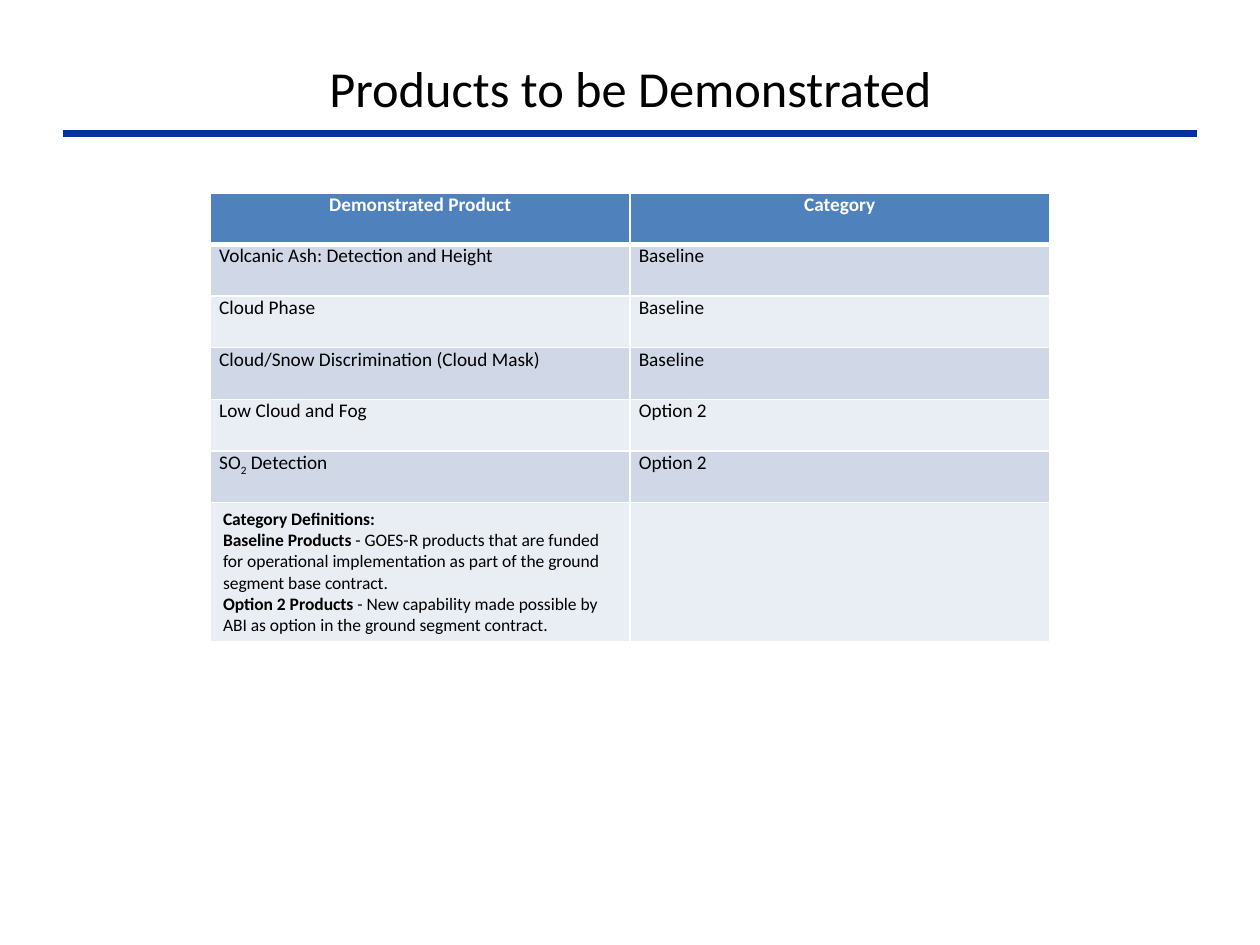
from dataclasses import dataclass
from typing import Any

from lxml.etree import SubElement
from pptx import Presentation
from pptx.dml.color import RGBColor
from pptx.enum.shapes import MSO_CONNECTOR
from pptx.enum.text import MSO_ANCHOR, PP_ALIGN
from pptx.oxml import parse_xml
from pptx.oxml.ns import nsdecls, qn
from pptx.util import Inches, Pt

BLACK = RGBColor(0x00, 0x00, 0x00)
WHITE = RGBColor(0xFF, 0xFF, 0xFF)
RULE_BLUE = RGBColor(0x00, 0x33, 0x99)
HEADER_BLUE = RGBColor(0x4F, 0x81, 0xBD)
BANDS = RGBColor(0xE9, 0xED, 0xF4), RGBColor(0xD0, 0xD8, 0xE8)

PRODUCTS = [
    ("Demonstrated Product", "Category"),
    ("Volcanic Ash: Detection and Height", "Baseline"),
    ("Cloud Phase", "Baseline"),
    ("Cloud/Snow Discrimination (Cloud Mask)", "Baseline"),
    ("Low Cloud and Fog", "Option 2"),
    (["SO", ("2", "sub"), " Detection"], "Option 2"),
]
DEFINITIONS = [
    [("Category Definitions:", "bold")],
    [("Baseline Products", "bold"),
     " - GOES-R products that are funded for operational implementation"
     " as part of the ground segment base contract."],
    [("Option 2 Products", "bold"),
     " - New capability made possible by ABI as option in the ground segment contract."],
]


@dataclass
class SlideBuilder:
    slide: Any
    font: str = "Calibri"

    def text(self, p, content, size, color=BLACK, bold=None, align=PP_ALIGN.LEFT):
        p.alignment = align
        p.font.name = self.font
        p.font.size = Pt(size)
        p.font.color.rgb = color
        p.font.bold = bold
        for part in [content] if isinstance(content, str) else content:
            words, mark = (part, None) if isinstance(part, str) else part
            r = p.add_run()
            r.text = words
            if mark == "bold":
                r.font.bold = True
            elif mark == "sub":
                r.font._element.set("baseline", "-25000")

    def title(self, words, left, top, width, height):
        sp = self.slide.shapes.add_textbox(
            Inches(left), Inches(top), Inches(width), Inches(height))
        tf = sp.text_frame
        tf.word_wrap = True
        tf.vertical_anchor = MSO_ANCHOR.MIDDLE
        self.text(tf.paragraphs[0], words, 28.8, align=PP_ALIGN.CENTER)

    def rule(self, left, right, y):
        line = self.slide.shapes.add_connector(
            MSO_CONNECTOR.STRAIGHT, Inches(left), Inches(y), Inches(right), Inches(y))
        line.line.color.rgb = RULE_BLUE
        line.line.width = Pt(4)
        SubElement(line._element.spPr, qn("a:effectLst"))

    def table(self, left, top, col_width, heights):
        frame = self.slide.shapes.add_table(
            len(heights), 2, Inches(left), Inches(top),
            Inches(2 * col_width), Inches(sum(heights)))
        for col in frame.table.columns:
            col.width = Inches(col_width)
        for row, height in zip(frame.table.rows, heights):
            row.height = Inches(height)
        return frame.table

    def style_cell(self, cell, fill, top=1, bottom=1):
        tc_pr = cell._tc.get_or_add_tcPr()
        for i, (side, width) in enumerate(zip("LRTB", (1, 1, top, bottom))):
            tc_pr.insert(i, parse_xml(
                f'<a:ln{side} {nsdecls("a")} w="{Pt(width)}"><a:solidFill>'
                f'<a:srgbClr val="{WHITE}"/></a:solidFill></a:ln{side}>'))
        cell.fill.solid()
        cell.fill.fore_color.rgb = fill

    def product_row(self, table, index, values):
        header = index == 0
        for col, value in enumerate(values):
            cell = table.cell(index, col)
            self.style_cell(cell, HEADER_BLUE if header else BANDS[index % 2],
                            top=3 if index == 1 else 1, bottom=3 if header else 1)
            cell.margin_left = cell.margin_right = Inches(0.07)
            cell.margin_top = cell.margin_bottom = 0
            self.text(cell.text_frame.paragraphs[0], value, 11,
                      WHITE if header else BLACK, header,
                      PP_ALIGN.CENTER if header else PP_ALIGN.LEFT)

    def definition_row(self, table, index, definitions):
        for col in range(2):
            self.style_cell(table.cell(index, col), BANDS[index % 2])
        tf = table.cell(index, 0).text_frame
        for i, definition in enumerate(definitions):
            p = tf.add_paragraph() if i else tf.paragraphs[0]
            self.text(p, definition, 10)


def main():
    prs = Presentation()
    prs.slide_width, prs.slide_height = Inches(10), Inches(7.5)
    s = SlideBuilder(prs.slides.add_slide(prs.slide_layouts[6]))
    s.title("Products to be Demonstrated", 0.35, 0.38, 9.31, 0.62)
    s.rule(0.5, 9.5, 1.06)
    table = s.table(1.67, 1.53, 3.33, [0.41] * len(PRODUCTS) + [1.1])
    for i, values in enumerate(PRODUCTS):
        s.product_row(table, i, values)
    s.definition_row(table, len(PRODUCTS), DEFINITIONS)
    prs.save("out.pptx")


if __name__ == "__main__":
    main()
